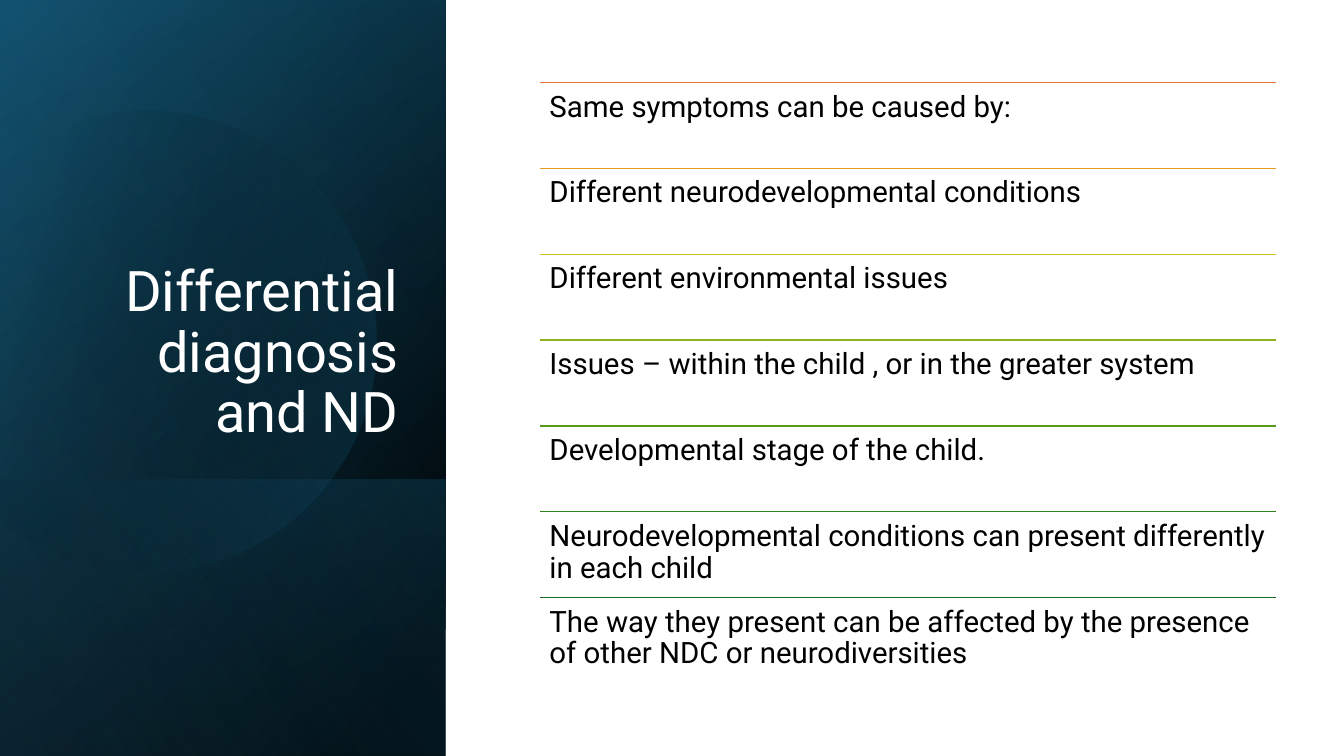
from math import cos, radians, sin, tan

from lxml import etree
from pptx import Presentation
from pptx.dml.color import RGBColor
from pptx.enum.shapes import MSO_CONNECTOR, MSO_SHAPE
from pptx.enum.text import MSO_ANCHOR, PP_ALIGN
from pptx.oxml.ns import qn
from pptx.util import Inches, Pt

LINE = MSO_CONNECTOR.STRAIGHT
RECT = MSO_SHAPE.RECTANGLE
LEFT, RIGHT = PP_ALIGN.LEFT, PP_ALIGN.RIGHT
TOP, BOTTOM = MSO_ANCHOR.TOP, MSO_ANCHOR.BOTTOM

FONT = "Roboto"
WIDE, HIGH = 13.33, 7.5
SIDE = 4.42  # width of the dark panel
LIST_X, LIST_Y, LIST_W, LIST_H = 5.36, 0.82, 7.3, 5.96

COLORS = {
    "black": "000000",
    "white": "FFFFFF",
    "navy": "104862",
    "teal": "156082",
    "sky": "46B1E1",
}

# Stops are (position, colour, opacity), all in percent.
PANELS = [
    (0, HIGH, 50, [(8, "black", 100), (100, "navy", 100)]),
    (0, HIGH, 30, [(0, "black", 0), (99, "teal", 46)]),
    (4.76, 2.74, 130, [(2, "teal", 29), (100, "black", 30)]),
]
DISC = [(29, "black", 0), (100, "teal", 43)]
GLOW = (0, HIGH, 120, [(0, "black", 0), (99, "sky", 11)])

ROWS = [
    ("E97132", "Same symptoms can be caused by:"),
    ("E39D1F", "Different neurodevelopmental conditions"),
    ("CBC11E", "Different environmental issues"),
    ("8EB21E", "Issues – within the child , or in the greater system"),
    ("56991D", "Developmental stage of the child."),
    ("2C821B", "Neurodevelopmental conditions can present differently in each child"),
    ("196B24", "The way they present can be affected by the presence of other NDC "
               "or neurodiversities"),
]


def shade(shape, angle, stops):
    """Give the shape a linear gradient, with no line and no shadow."""
    shape.shadow.inherit = False
    shape.line.fill.background()
    shape.fill.gradient()
    grad = shape.fill._xPr.find(qn("a:gradFill"))
    for child in list(grad):
        grad.remove(child)
    items = etree.SubElement(grad, qn("a:gsLst"))
    for pos, name, alpha in stops:
        stop = etree.SubElement(items, qn("a:gs"), pos=str(pos * 1000))
        color = etree.SubElement(stop, qn("a:srgbClr"), val=COLORS[name])
        etree.SubElement(color, qn("a:alpha"), val=str(alpha * 1000))
    etree.SubElement(grad, qn("a:lin"), ang=str(angle * 60000), scaled="0")


def add_panel(shapes, top, height, angle, stops):
    """Add a mirrored rectangle, turned a quarter, over the side panel."""
    box = (SIDE - height) / 2, top + (height - SIDE) / 2, height, SIDE
    panel = shapes.add_shape(RECT, *map(Inches, box))
    panel.rotation = 90
    panel._element.spPr.find(qn("a:xfrm")).set("flipH", "1")
    shade(panel, angle, stops)


def bend(line, start, end, turns, radius):
    """Turn a straight segment of a freeform into an arc of a circle."""
    first, last = map(radians, turns)
    pull = 4 / 3 * tan((last - first) / 4) * radius
    line.tag = qn("a:cubicBezTo")
    spots = [
        (start[0] - pull * sin(first), start[1] + pull * cos(first)),
        (end[0] + pull * sin(last), end[1] - pull * cos(last)),
    ]
    for order, (x, y) in enumerate(spots):
        spot = etree.Element(qn("a:pt"), x=str(round(x)), y=str(round(y)))
        line.insert(order, spot)


def add_disc(shapes):
    """Add a tilted disc cut by a chord, drawn in thousandths of an inch."""
    mid_x, mid_y, radius = 1435, 3350, 2290
    turns = [-117.9, -90, 0, 90, 150.1]
    points = [(mid_x + radius * cos(radians(turn)),
               mid_y + radius * sin(radians(turn))) for turn in turns]
    path = shapes.build_freeform(*points[0], scale=Inches(1) / 1000)
    path.add_line_segments(points[1:], close=True)
    disc = path.convert_to_shape()
    left = min(x for x, y in points)
    top = min(y for x, y in points)
    local = [(x - left, y - top) for x, y in points]
    lines = list(disc._element.iter(qn("a:lnTo")))
    arcs = zip(lines, local, local[1:], zip(turns, turns[1:]))
    for line, start, end, pair in arcs:
        # A fresh element takes the place of the straight segment.
        curve = etree.Element(qn("a:cubicBezTo"))
        curve.extend(list(line))
        line.getparent().replace(line, curve)
        bend(curve, start, end, pair, radius)
    disc.rotation = 343.9
    shade(disc, 30, DISC)


def add_text(shapes, box, text, size, color, align, anchor, inset):
    frame = shapes.add_textbox(*map(Inches, box)).text_frame
    frame.word_wrap = True
    frame.vertical_anchor = anchor
    frame.margin_left = frame.margin_right = Inches(inset[0])
    frame.margin_top = frame.margin_bottom = Inches(inset[1])
    para = frame.paragraphs[0]
    para.alignment = align
    para.line_spacing = 0.9
    run = para.add_run()
    run.text = text
    run.font.size = Pt(size)
    run.font.name = FONT
    run.font.color.rgb = RGBColor.from_string(COLORS[color])


def add_rule(shapes, y, color):
    ends = LIST_X, y, LIST_X + LIST_W, y
    rule = shapes.add_connector(LINE, *map(Inches, ends))
    rule.line.width = Pt(1)
    rule.line.color.rgb = RGBColor.from_string(color)
    etree.SubElement(rule._element.spPr, qn("a:effectLst"))


def add_list(shapes):
    pitch = LIST_H / len(ROWS)
    for row, (color, text) in enumerate(ROWS):
        y = LIST_Y + row * pitch
        add_rule(shapes, y, color)
        add_text(shapes, (LIST_X, y, LIST_W, pitch), text,
                 21, "black", LEFT, TOP, (0.09, 0.09))


def main():
    deck = Presentation()
    deck.slide_width, deck.slide_height = Inches(WIDE), Inches(HIGH)
    shapes = deck.slides.add_slide(deck.slide_layouts[6]).shapes
    for panel in PANELS:
        add_panel(shapes, *panel)
    add_disc(shapes)
    add_panel(shapes, *GLOW)
    add_text(shapes, (0.64, 1.84, 3.41, 2.62), "Differential diagnosis and ND",
             40, "white", RIGHT, BOTTOM, (0.1, 0.05))
    add_list(shapes.add_group_shape().shapes)
    deck.save("out.pptx")


if __name__ == "__main__":
    main()
